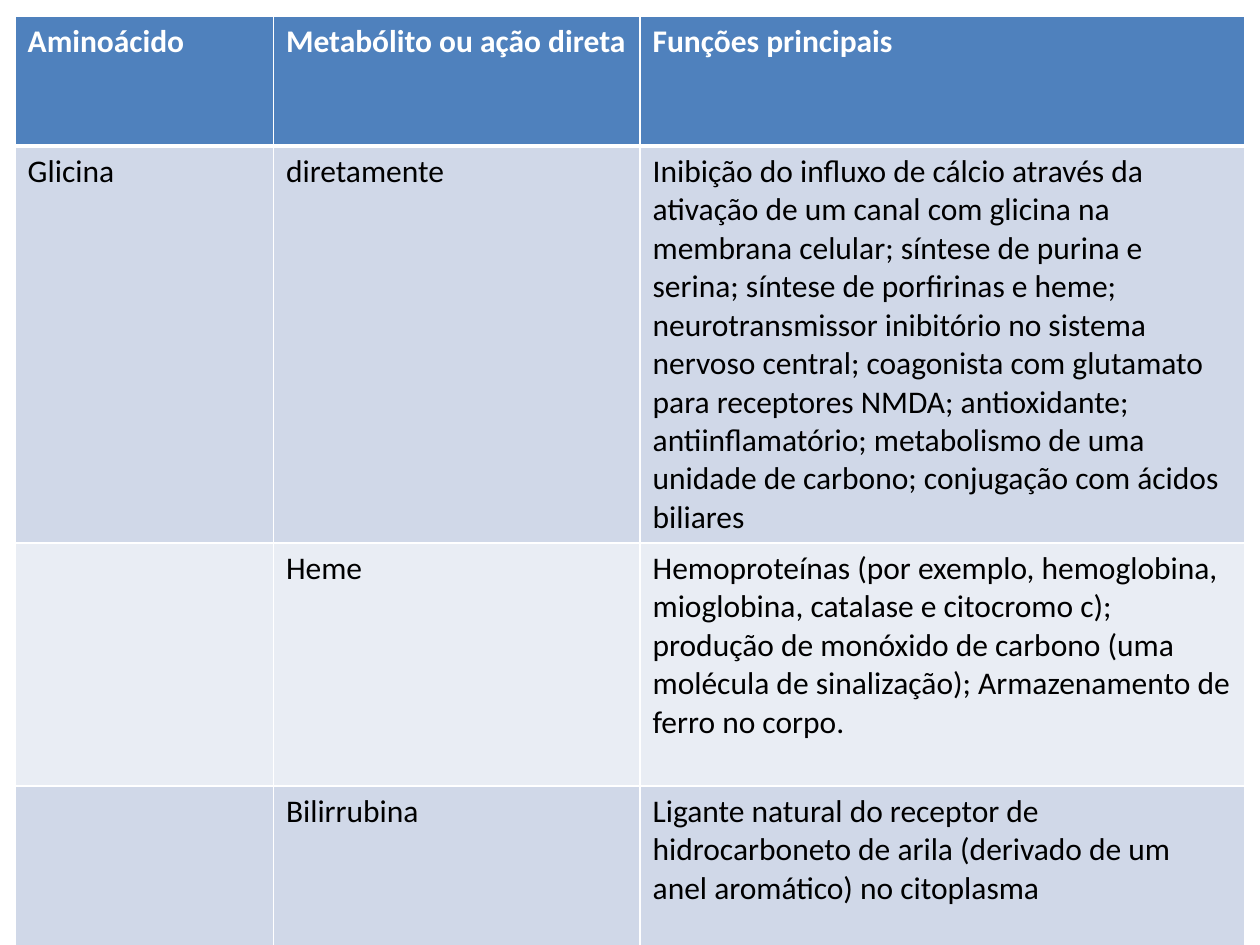
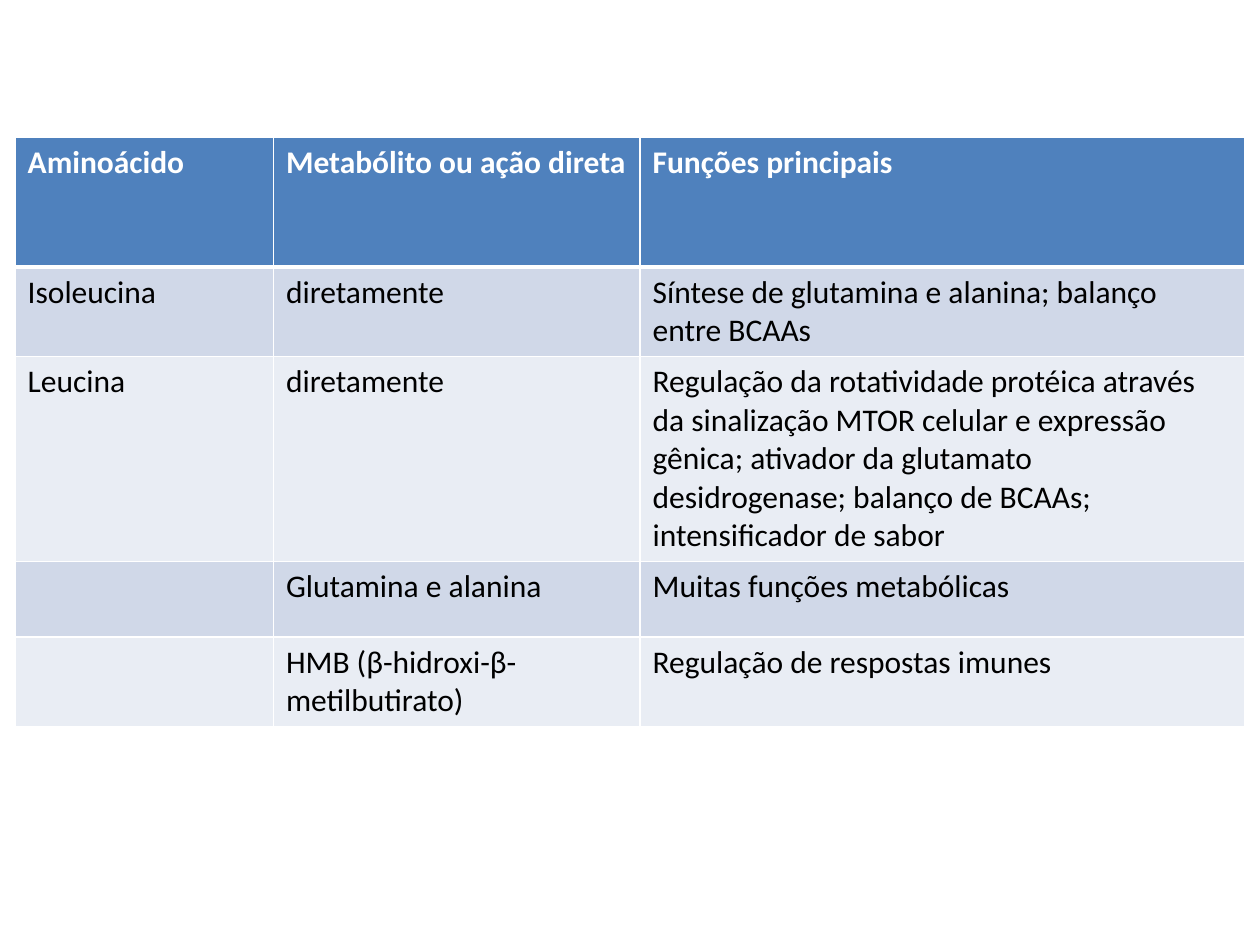
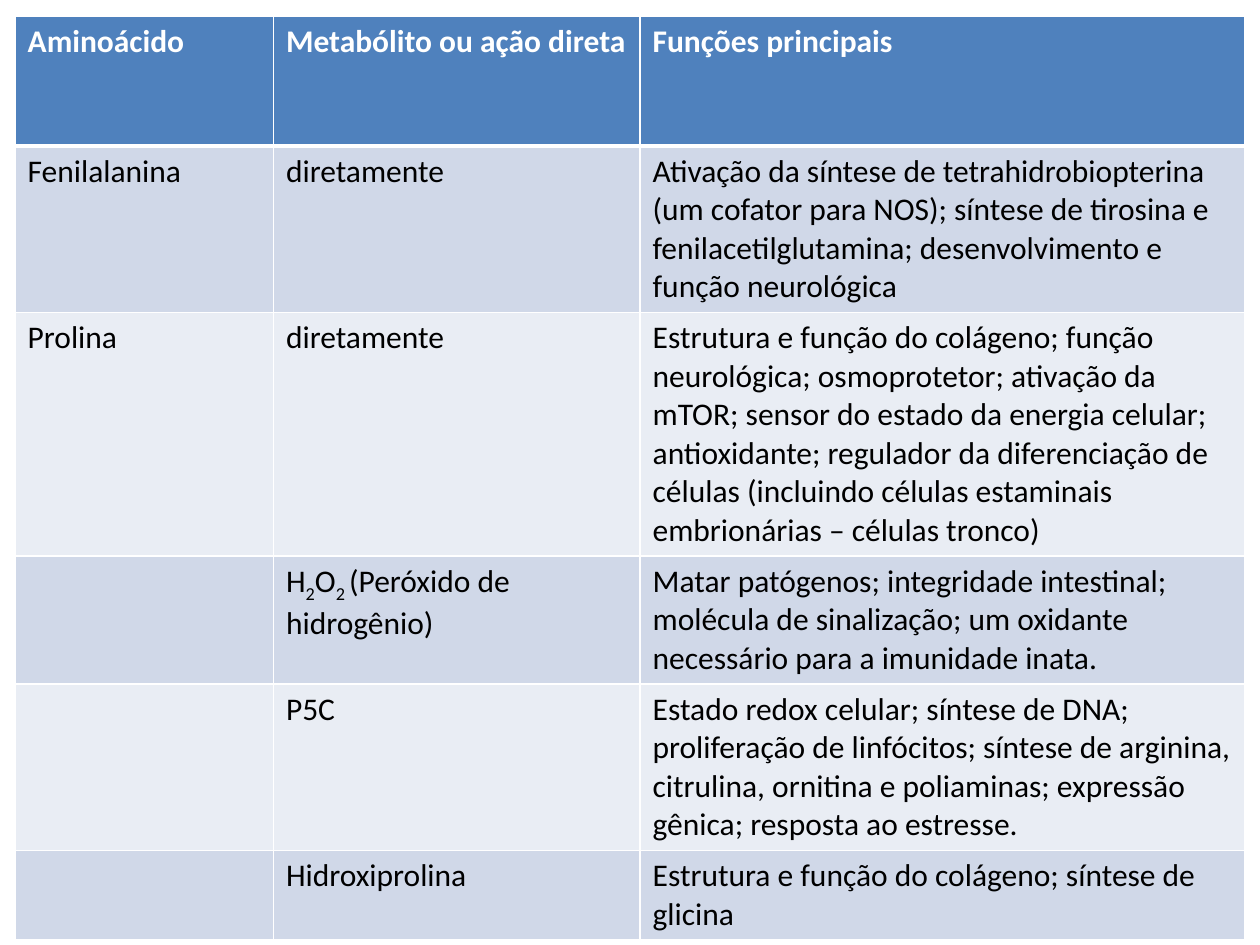
from lxml.etree import SubElement as Sub
from pptx import Presentation as Deck
from pptx.dml.color import RGBColor as RGB
from pptx.oxml.ns import qn
from pptx.util import Inches, Pt

HUES = {"head": "4F81BD", "odd": "D0D8E8", "even": "E9EDF4",
        "ink": "000000", "white": "FFFFFF"}
FONT = "Calibri"
HEAD = ("Aminoácido", "Metabólito ou ação direta", "Funções principais")
COLS = (20.5, 29.1, 48)  # percent of the slide width
LEFT = 1.2
HEAD_ROW, BODY_ROW = 13.73, 8  # percent of the slide height
GAP = 4.67  # room left under a loose row

GLYCINE = [
    ("Glicina", "diretamente",
     "Inibição do influxo de cálcio através da ativação de um canal com glicina na "
     "membrana celular; síntese de purina e serina; síntese de porfirinas e heme; "
     "neurotransmissor inibitório no sistema nervoso central; coagonista com glutamato "
     "para receptores NMDA; antioxidante; antiinflamatório; metabolismo de uma unidade "
     "de carbono; conjugação com ácidos biliares"),
    ("", "Heme",
     "Hemoproteínas (por exemplo, hemoglobina, mioglobina, catalase e citocromo c); "
     "produção de monóxido de carbono (uma molécula de sinalização); Armazenamento de "
     "ferro no corpo."),
    ("", "Bilirrubina",
     "Ligante natural do receptor de hidrocarboneto de arila (derivado de um anel "
     "aromático) no citoplasma"),
]
LEUCINE = [
    ("Isoleucina", "diretamente", "Síntese de glutamina e alanina; balanço entre BCAAs"),
    ("Leucina", "diretamente",
     "Regulação da rotatividade protéica através da sinalização MTOR celular e expressão "
     "gênica; ativador da glutamato desidrogenase; balanço de BCAAs; intensificador de "
     "sabor"),
    ("", "Glutamina e alanina", "Muitas funções metabólicas"),
    ("", "HMB (β-hidroxi-β-metilbutirato)", "Regulação de respostas imunes"),
]
PROLINE = [
    ("Fenilalanina", "diretamente",
     "Ativação da síntese de tetrahidrobiopterina (um cofator para NOS); síntese de "
     "tirosina e fenilacetilglutamina; desenvolvimento e função neurológica"),
    ("Prolina", "diretamente",
     "Estrutura e função do colágeno; função neurológica; osmoprotetor; ativação da mTOR; "
     "sensor do estado da energia celular; antioxidante; regulador da diferenciação de "
     "células (incluindo células estaminais embrionárias – células tronco)"),
    ("", "H_2_O_2 _(Peróxido de hidrogênio)",
     "Matar patógenos; integridade intestinal; molécula de sinalização; um oxidante "
     "necessário para a imunidade inata."),
    ("", "P5C",
     "Estado redox celular; síntese de DNA; proliferação de linfócitos; síntese de "
     "arginina, citrulina, ornitina e poliaminas; expressão gênica; resposta ao estresse."),
    ("", "Hidroxiprolina", "Estrutura e função do colágeno; síntese de glicina"),
]


def write(frame, text, size=18, hue="ink", bold=False):
    """Fill the first paragraph; parts between underscores are subscript."""
    para = frame.paragraphs[0]
    para.font.size = Pt(size)
    for i, part in enumerate(text.split("_")):
        if not part:
            continue
        run = para.add_run()
        run.text = part
        font = run.font
        font.name, font.size, font.bold = FONT, Pt(size), bold
        font.color.rgb = RGB.from_string(HUES[hue])
        if i % 2:
            run._r.get_or_add_rPr().set("baseline", "-25000")


def edge(cell, **widths):
    """Draw white borders; widths in points by side."""
    props = cell._tc.get_or_add_tcPr()
    for side in "LRTB":
        line = Sub(props, qn(f"a:ln{side}"), w=str(Pt(widths.get(side, 1))))
        fill = Sub(line, qn("a:solidFill"))
        Sub(fill, qn("a:srgbClr"), val=HUES["white"])


class Page:
    def __init__(self):
        self.deck = Deck()
        self.deck.slide_width, self.deck.slide_height = Inches(10), Inches(7.5)
        self.slide = None

    def x(self, share):
        return round(self.deck.slide_width * share / 100)

    def y(self, share):
        return round(self.deck.slide_height * share / 100)

    def new(self):
        self.slide = self.deck.slides.add_slide(self.deck.slide_layouts[6])

    def cell(self, cell, text, fill, **style):
        cell.fill.solid()
        cell.fill.fore_color.rgb = RGB.from_string(HUES[fill])
        write(cell.text_frame, text, **style)

    def table(self, body, top, high, loose=()):
        """Place a headed table; rows numbered in loose get extra room below."""
        rows = [HEAD, *body]
        frame = self.slide.shapes.add_table(
            len(rows), len(COLS), self.x(LEFT), self.y(top),
            self.x(sum(COLS)), self.y(high))
        grid = frame.table
        for col, wide in zip(grid.columns, COLS):
            col.width = self.x(wide)
        for r, texts in enumerate(rows):
            grid.rows[r].height = self.y(BODY_ROW if r else HEAD_ROW)
            for c, text in enumerate(texts):
                cell = grid.cell(r, c)
                edge(cell, T=3 if r == 1 else 1, B=1 if r else 3)
                if r in loose:
                    cell.margin_bottom = self.y(GAP)
                if r:
                    self.cell(cell, text, "odd" if r % 2 else "even")
                else:
                    self.cell(cell, text, "head", hue="white", bold=True)
        frame.height = self.y(high)


def main():
    page = Page()
    for body, top, high, loose in (
            (GLYCINE, 1.73, 97.73, (2, 3)),
            (LEUCINE, 14.53, 61.73, ()),
            (PROLINE, 1.73, 96.4, ())):
        page.new()
        page.table(body, top, high, loose)
    page.deck.save("out.pptx")


if __name__ == "__main__":
    main()
